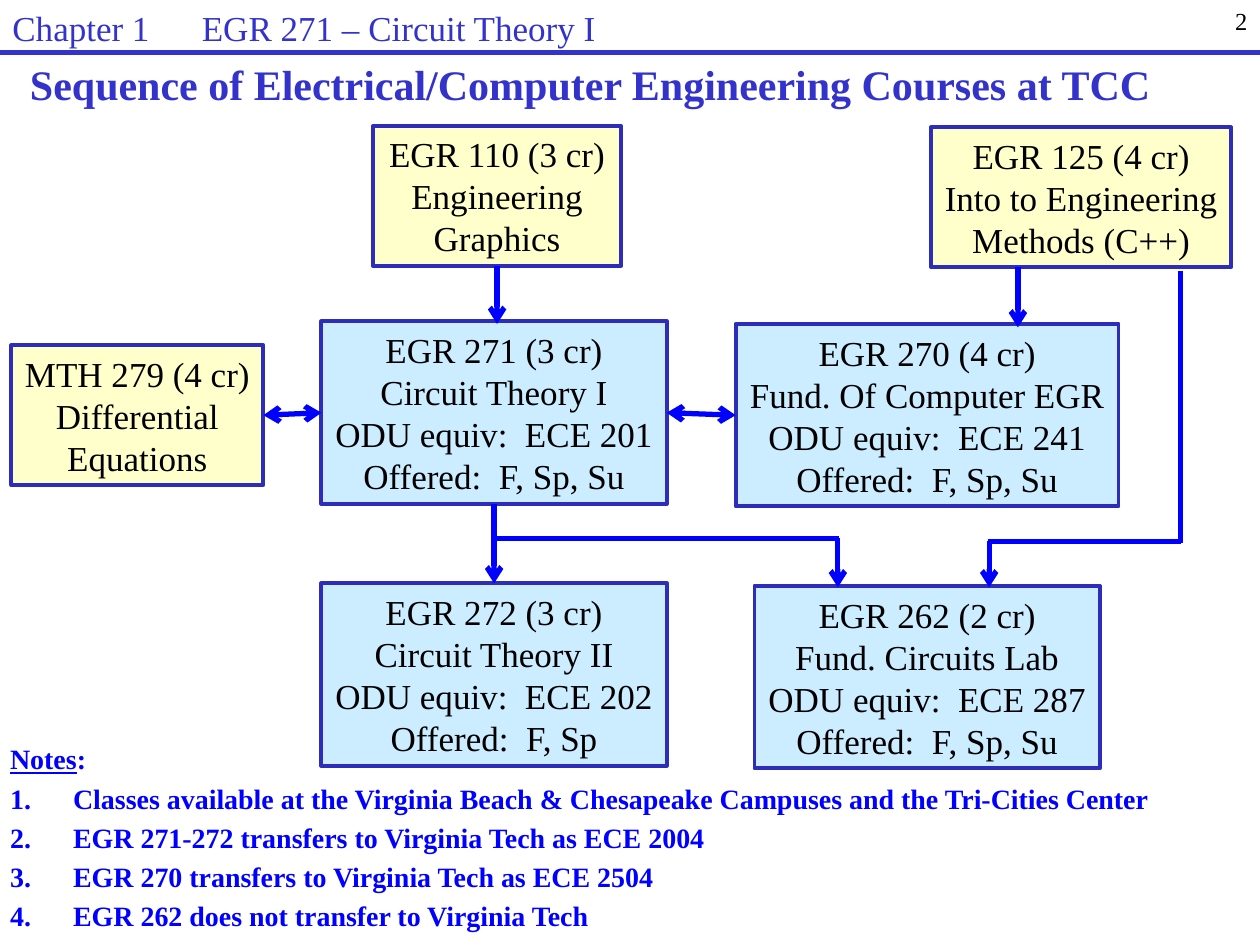
from lxml import etree
from pptx import Presentation
from pptx import util as u
from pptx.dml.color import RGBColor
from pptx.enum import shapes, text
from pptx.oxml.ns import qn

FACE = "Times New Roman"
HUES = {"head": "3333CC", "edge": "2D2DB9", "link": "0000FF", "ink": "000000",
        "core": "CCECFF", "prep": "FFFFCC"}

PREP, CORE = 2.82, 3.68
BOXES = {
    "271": (6.48, 6.48, 6.96, CORE, "core",
            "EGR 271 (3 cr)\nCircuit Theory I\nODU equiv:  ECE 201\nOffered:  F, Sp, Su"),
    "272": (6.48, 11.76, 6.96, CORE, "core",
            "EGR 272 (3 cr)\nCircuit Theory II\nODU equiv:  ECE 202\nOffered:  F, Sp"),
    "262": (15.21, 11.81, 6.96, CORE, "core",
            "EGR 262 (2 cr)\nFund. Circuits Lab\nODU equiv:  ECE 287\nOffered:  F, Sp, Su"),
    "270": (14.83, 6.53, 7.72, CORE, "core",
            "EGR 270 (4 cr)\nFund. Of Computer EGR\nODU equiv:  ECE 241\nOffered:  F, Sp, Su"),
    "125": (18.77, 2.57, 6.05, PREP, "prep",
            "EGR 125 (4 cr)\nInto to Engineering\nMethods (C++)"),
    "279": (0.23, 6.96, 5.08, PREP, "prep",
            "MTH 279 (4 cr)\nDifferential\nEquations"),
    "110": (7.52, 2.54, 5, PREP, "prep",
            "EGR 110 (3 cr)\nEngineering\nGraphics"),
}
JOINS = [("279", 3, "271", 1, ("headEnd", "tailEnd")),
         ("271", 3, "270", 1, ("headEnd", "tailEnd")),
         ("271", 2, "272", 0, ("tailEnd",))]
ARROWS = [(10.02, 5.36, 10.02, 6.53), (20.52, 5.39, 20.52, 6.6),
          (16.89, 10.85, 16.89, 11.84), (19.94, 10.9, 19.94, 11.84)]
LINES = [(9.98, 10.85, 16.92, 10.85), (19.91, 10.92, 23.8, 10.92),
         (23.8, 5.46, 23.8, 10.95)]
NOTES = ["Classes available at the Virginia Beach & Chesapeake Campuses and the Tri-Cities Center",
         "EGR 271-272 transfers to Virginia Tech as ECE 2004",
         "EGR 270 transfers to Virginia Tech as ECE 2504",
         "EGR 262 does not transfer to Virginia Tech"]


def hue(name):
    """Return the named colour."""
    return RGBColor.from_string(HUES[name])


def place(shape, box):
    """Move a shape to a box given in centimetres."""
    shape.left, shape.top, shape.width, shape.height = map(u.Cm, box)


def style(para, size, tint, align=text.PP_ALIGN.LEFT, bold=False):
    """Set the alignment and font of a paragraph."""
    para.alignment = align
    font = para.font
    font.name, font.size, font.bold = FACE, u.Pt(size), bold
    font.color.rgb = hue(tint)


def frame(shape, anchor=text.MSO_ANCHOR.TOP, wrap=True):
    """Prepare and return the text frame of a shape."""
    body = shape.text_frame
    body.word_wrap = wrap
    body.auto_size = text.MSO_AUTO_SIZE.NONE
    body.vertical_anchor = anchor
    return body


def link(slide, ends, tint="link", tips=()):
    """Draw a straight line with arrowheads at the named tips."""
    line = slide.shapes.add_connector(shapes.MSO_CONNECTOR.STRAIGHT, *map(u.Cm, ends))
    line.line.color.rgb = hue(tint)
    line.line.width = u.Pt(3)
    for tip in tips:
        etree.SubElement(line.line._get_or_add_ln(), qn("a:" + tip), type="arrow")
    etree.SubElement(line._element.spPr, qn("a:effectLst"))
    return line


def header(slide, box):
    """Draw the chapter name, page number and rule across the top."""
    left, top, width, height = box
    label = slide.shapes.add_textbox(0, 0, 0, 0)
    place(label, (left, top, 13.97, 0.84))
    para = frame(label).paragraphs[0]
    para.text = "Chapter 1\tEGR 271 – Circuit Theory I"
    para.space_before = u.Pt(3)
    tabs = etree.SubElement(para._p.get_or_add_pPr(), qn("a:tabLst"))
    etree.SubElement(tabs, qn("a:tab"), pos=str(u.Cm(3.82)), algn="l")
    style(para, 20, "head")
    page = slide.shapes.add_textbox(0, 0, 0, 0)
    place(page, (left + width - 5.28, top, 5.28, height))
    para = frame(page).paragraphs[0]
    para.text = "2"
    style(para, 14, "ink", text.PP_ALIGN.RIGHT)
    link(slide, (left, top + height, left + width, top + height), "head")


def title(slide, box):
    """Fill the title placeholder."""
    shape = slide.shapes.title
    place(shape, box)
    para = frame(shape).paragraphs[0]
    para.text = "Sequence of Electrical/Computer Engineering Courses at TCC"
    para.space_before = u.Pt(3)
    style(para, 24, "head", bold=True)


def notes(slide, box):
    """Fill the body placeholder with the numbered notes."""
    shape = slide.placeholders[1]
    place(shape, box)
    body = frame(shape)
    first = body.paragraphs[0]
    word, colon = first.add_run(), first.add_run()
    word.text, colon.text = "Notes", ":"
    word.font.underline = True
    props = first._p.get_or_add_pPr()
    props.set("marL", "0")
    props.set("indent", "0")
    etree.SubElement(props, qn("a:buNone"))
    style(first, 16, "link", bold=True)
    for note in NOTES:
        para = body.add_paragraph()
        para.text = note
        props = para._p.get_or_add_pPr()
        props.set("marL", str(u.Cm(1.27)))
        props.set("indent", str(-u.Cm(1.27)))
        etree.SubElement(props, qn("a:buFont"), typeface=FACE)
        etree.SubElement(props, qn("a:buAutoNum"), type="arabicPeriod")
        style(para, 16, "link", bold=True)


def course(slide, box, fill, words):
    """Draw one course box with centred lines of text."""
    shape = slide.shapes.add_shape(shapes.MSO_SHAPE.RECTANGLE, *map(u.Cm, box))
    shape.shadow.inherit = False
    shape.fill.solid()
    shape.fill.fore_color.rgb = hue(fill)
    shape.line.color.rgb = hue("edge")
    shape.line.width = u.Pt(2.25)
    body = frame(shape, text.MSO_ANCHOR.MIDDLE, False)
    body.text = words
    for para in body.paragraphs:
        style(para, 20, "ink", text.PP_ALIGN.CENTER)
    return shape


def chart(slide, left, top):
    """Draw the course boxes and the links between them."""
    cards = {key: course(slide, (left + x, top + y, wide, high), fill, words)
             for key, (x, y, wide, high, fill, words) in BOXES.items()}
    for start, out, end, into, tips in JOINS:
        line = link(slide, (0, 0, 0, 0), tips=tips)
        line.begin_connect(cards[start], out)
        line.end_connect(cards[end], into)
    for group, tips in ((ARROWS, ("tailEnd",)), (LINES, ())):
        for x1, y1, x2, y2 in group:
            link(slide, (left + x1, top + y1, left + x2, top + y2), tips=tips)


def main():
    """Build and save the slide."""
    deck = Presentation()
    deck.slide_width, deck.slide_height = u.Cm(25.4), u.Cm(19.05)
    slide = deck.slides.add_slide(deck.slide_layouts[1])
    header(slide, (0, 0, 25.4, 1.06))
    title(slide, (0.35, 1.06, 25.05, 1.48))
    notes(slide, (-0.05, 14.83, 25.45, 4.22))
    chart(slide, 0, 0)
    deck.save("out.pptx")


if __name__ == "__main__":
    main()
